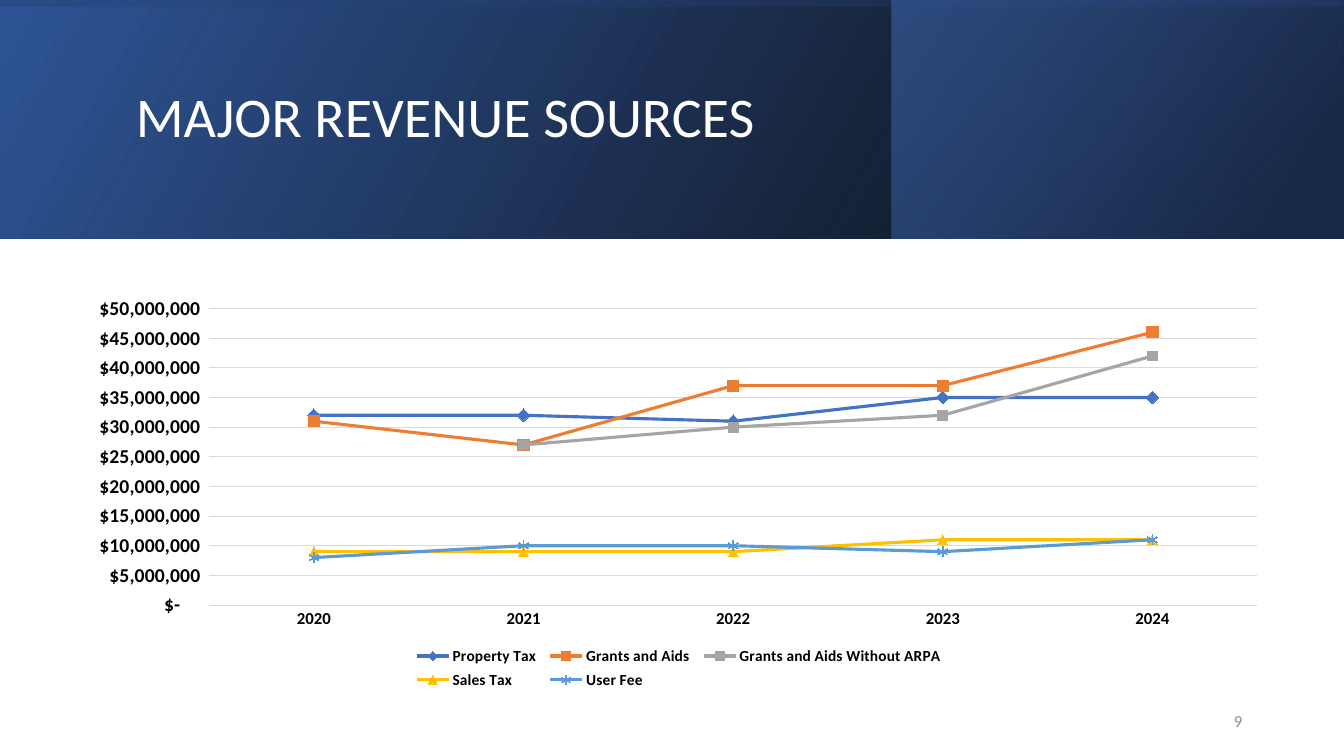
from dataclasses import dataclass

from lxml.etree import SubElement
from pptx import Presentation
from pptx.chart.data import CategoryChartData
from pptx.dml.color import RGBColor
from pptx.enum.chart import XL_CHART_TYPE as ChartType
from pptx.enum.chart import XL_LEGEND_POSITION as LegendPosition
from pptx.enum.chart import XL_MARKER_STYLE as Marker
from pptx.enum.chart import XL_TICK_MARK as TickMark
from pptx.enum.shapes import MSO_SHAPE as Shape
from pptx.enum.text import MSO_ANCHOR as Anchor
from pptx.enum.text import PP_ALIGN as Align
from pptx.oxml.ns import qn
from pptx.util import Inches, Pt


@dataclass(frozen=True)
class Theme:
    font: str = "Calibri"
    white: str = "FFFFFF"
    black: str = "000000"
    muted: str = "8C8C8C"
    grid: str = "D9D9D9"
    navy: str = "203864"
    deep_blue: str = "2F5597"
    blue: str = "4472C4"
    orange: str = "ED7D31"
    gray: str = "A5A5A5"
    gold: str = "FFC000"
    sky: str = "5B9BD5"
    title_size: int = 40
    value_size: int = 14
    small_size: int = 12
    legend_size: int = 11


THEME = Theme()
MILLION = 1_000_000
YEARS = ["2020", "2021", "2022", "2023", "2024"]
DOLLARS = '_("$"* #,##0_);_("$"* \\(#,##0\\);_("$"* "-"??_);_(@_)'

# Name, values in millions, colour, marker style, marker size
REVENUES = [
    ("Property Tax", [32, 32, 31, 35, 35], THEME.blue, Marker.DIAMOND, 9),
    ("Grants and Aids", [31, 27, 37, 37, 46], THEME.orange, Marker.SQUARE, 8),
    ("Grants and Aids Without ARPA", [None, 27, 30, 32, 42], THEME.gray, Marker.SQUARE, 7),
    ("Sales Tax", [9, 9, 9, 11, 11], THEME.gold, Marker.TRIANGLE, 7),
    ("User Fee", [8, 10, 10, 9, 11], THEME.sky, Marker.STAR, 7),
]


def rgb(color):
    return RGBColor.from_string(color)


def style_font(font, size, color=THEME.black, bold=False):
    font.name = THEME.font
    font.size = Pt(size)
    font.bold = bold
    font.color.rgb = rgb(color)


def write_text(frame, text, size, color, align=Align.LEFT, spacing=1.0):
    frame.word_wrap = True
    frame.vertical_anchor = Anchor.MIDDLE
    para = frame.paragraphs[0]
    para.alignment = align
    para.line_spacing = spacing
    span = para.add_run()
    span.text = text
    style_font(span.font, size, color)


def style_line(line, color, width):
    line.color.rgb = rgb(color)
    line.width = Pt(width)


def style_marker(marker, color):
    marker.format.fill.solid()
    marker.format.fill.fore_color.rgb = rgb(color)
    style_line(marker.format.line, color, 0.75)


def place_in_chart(parent, before, inner, **fractions):
    """Give a chart part a manual layout in fractions of the chart."""
    for old in parent.findall(qn("c:layout")):
        parent.remove(old)
    layout = SubElement(parent, qn("c:layout"))
    manual = SubElement(layout, qn("c:manualLayout"))
    if inner:
        SubElement(manual, qn("c:layoutTarget")).set("val", "inner")
    for key in ("x", "y"):
        SubElement(manual, qn(f"c:{key}Mode")).set("val", "edge")
    for key, value in fractions.items():
        SubElement(manual, qn(f"c:{key}")).set("val", str(value))
    parent.find(qn(before)).addprevious(layout)


class SlideBuilder:
    def __init__(self, slide, theme):
        self.slide = slide
        self.theme = theme

    def gradient_band(self, left, top, width, height, stops, angle, rotation=0):
        band = self.slide.shapes.add_shape(
            Shape.RECTANGLE, Inches(left), Inches(top), Inches(width), Inches(height))
        band.shadow.inherit = False
        band.line.fill.background()
        band.rotation = rotation
        band.fill.gradient()
        band.fill.gradient_angle = 360 - angle
        for stop, (position, color, _) in zip(band.fill.gradient_stops, stops):
            stop.position = position / 100
            stop.color.rgb = rgb(color)
        # Opacity and mirroring
        properties = band._element.spPr
        properties.find(qn("a:xfrm")).set("flipH", "1")
        for node, (_, _, opacity) in zip(properties.iter(qn("a:srgbClr")), stops):
            SubElement(node, qn("a:alpha")).set("val", str(opacity * 1000))

    def text(self, left, top, width, height, text, **style):
        box = self.slide.shapes.add_textbox(
            Inches(left), Inches(top), Inches(width), Inches(height))
        write_text(box.text_frame, text, **style)

    def line_chart(self, left, top, width, height):
        data = CategoryChartData(number_format=DOLLARS)
        data.categories = YEARS
        for name, values, *_ in REVENUES:
            data.add_series(name, [v and v * MILLION for v in values])
        chart = self.slide.shapes.add_chart(
            ChartType.LINE_MARKERS, Inches(left), Inches(top),
            Inches(width), Inches(height), data).chart
        chart.has_title = False
        style_font(chart.font, 10)
        self.axes(chart)
        self.series(chart)
        self.legend(chart)
        place_in_chart(chart._chartSpace.chart.plotArea, "c:lineChart", True,
                       x=0.115, y=0.05, w=0.87, h=0.73)

    def axes(self, chart):
        years, amounts = chart.category_axis, chart.value_axis
        for axis, size in ((years, self.theme.small_size), (amounts, self.theme.value_size)):
            axis.major_tick_mark = axis.minor_tick_mark = TickMark.NONE
            style_font(axis.tick_labels.font, size, bold=True)
        style_line(years.format.line, self.theme.grid, 0.75)
        amounts.format.line.fill.background()
        style_line(amounts.major_gridlines.format.line, self.theme.grid, 0.75)
        amounts.minimum_scale, amounts.maximum_scale = 0, 50 * MILLION
        amounts.major_unit = 5 * MILLION
        amounts.tick_labels.number_format = DOLLARS
        amounts.tick_labels.number_format_is_linked = False

    def series(self, chart):
        plot = chart.plots[0]
        plot.vary_by_categories = False
        for line, (_, _, color, marker, size) in zip(plot.series, REVENUES):
            line.smooth = False
            style_line(line.format.line, color, 2.25)
            line.marker.style = marker
            line.marker.size = size
            style_marker(line.marker, color)
            if marker == Marker.STAR:
                line.marker.format.fill.background()
        # The 2023 point without ARPA is marked in orange
        point = plot.series[2].points[3]
        point.marker.style, point.marker.size = Marker.SQUARE, 7
        style_marker(point.marker, self.theme.orange)
        style_line(point.format.line, self.theme.gray, 2.25)

    def legend(self, chart):
        chart.has_legend = True
        legend = chart.legend
        legend.position = LegendPosition.BOTTOM
        legend.include_in_layout = False
        style_font(legend.font, self.theme.legend_size, bold=True)
        place_in_chart(legend._element, "c:overlay", False, x=0.28, y=0.87, w=0.45, h=0.13)


def main():
    deck = Presentation()
    deck.slide_width, deck.slide_height = Inches(13.33), Inches(7.5)
    page = SlideBuilder(deck.slides.add_slide(deck.slide_layouts[6]), THEME)

    # Header: stops are position, colour and opacity in percent
    page.gradient_band(0, 0, 13.33, 2.37,
                       [(0, THEME.black, 96), (100, THEME.deep_blue, 100)], 330)
    page.gradient_band(8.84, 0, 4.48, 2.37,
                       [(19, THEME.navy, 68), (100, THEME.blue, 48)], 320)
    page.gradient_band(5.48, -5.48, 2.37, 13.33,
                       [(23, THEME.deep_blue, 16), (99, THEME.black, 45)], 350, rotation=270)
    page.text(1.25, 0.32, 10.63, 1.72, "MAJOR REVENUE SOURCES",
              size=THEME.title_size, color=THEME.white, spacing=0.9)

    # Chart and page number
    page.line_chart(0.7, 2.86, 11.95, 4.03)
    page.text(9.42, 6.95, 3, 0.4, "9",
              size=THEME.small_size, color=THEME.muted, align=Align.RIGHT)
    deck.save("out.pptx")


if __name__ == "__main__":
    main()
